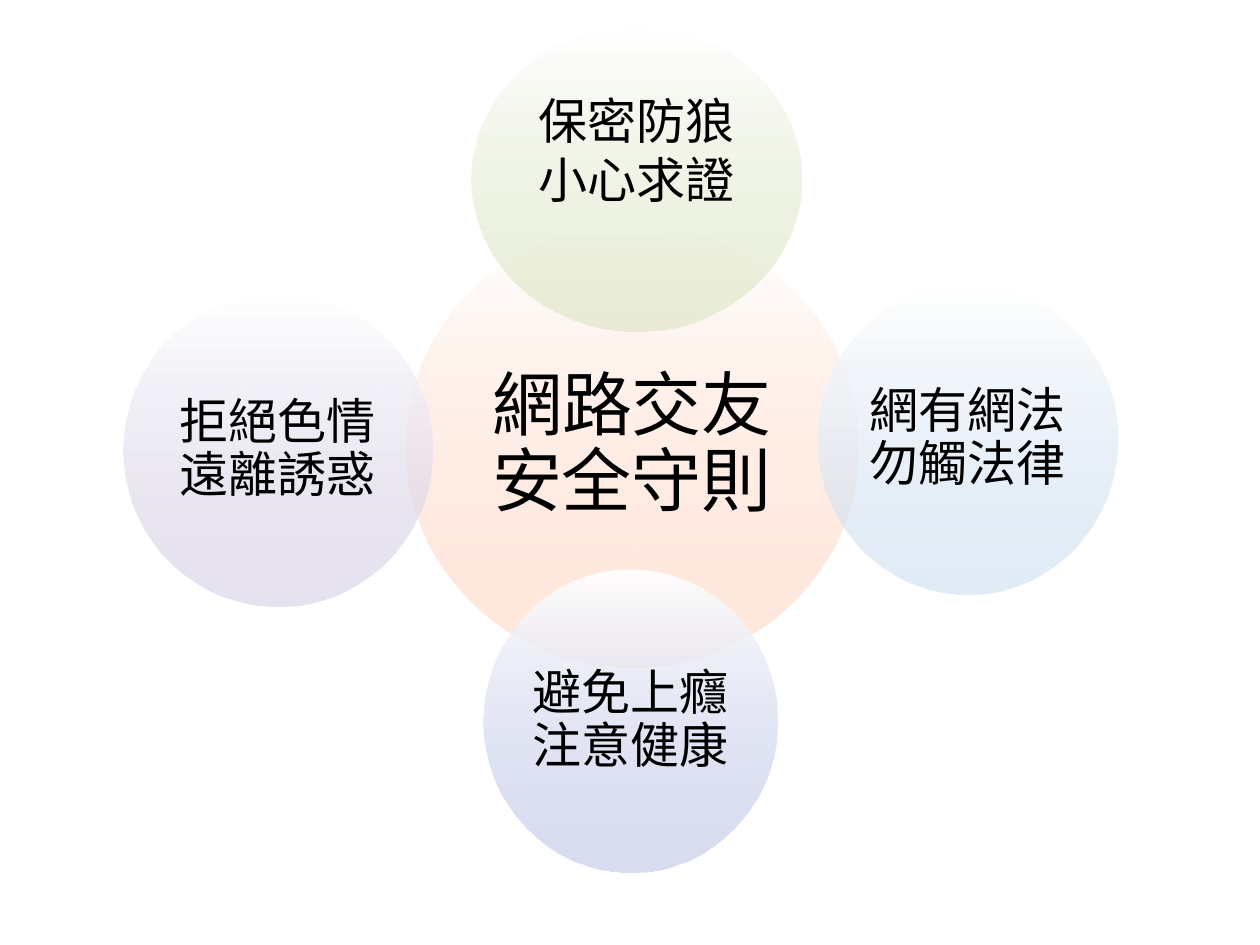
from lxml.etree import SubElement
from pptx import Presentation
from pptx.dml.color import RGBColor
from pptx.enum.shapes import MSO_SHAPE
from pptx.enum.text import MSO_ANCHOR, PP_ALIGN
from pptx.oxml.ns import qn
from pptx.util import Cm, Pt

COLORS = {
    "white": "FFFFFF",
    "text": "000000",
    "orange": "FFD0B9",
    "green": "D5E1B9",
    "blue": "C6DAEF",
    "indigo": "B2BBE2",
    "purple": "CEC6E0",
}


class RulesSlide:
    """Holds the style and the slide that the circles are drawn on."""

    font_name = "Noto Sans CJK SC"
    opacities = (94, 50)  # percent, top and bottom of each circle

    def __init__(self, presentation):
        self.slide = presentation.slides.add_slide(presentation.slide_layouts[6])

    def circle(self, text, color, left, top, width, height,
               size=28, inset=0.1, lift=0, line_spacing=0.9):
        shape = self.slide.shapes.add_shape(
            MSO_SHAPE.OVAL, Cm(left), Cm(top), Cm(width), Cm(height))
        shape.shadow.inherit = False
        shape.line.fill.background()
        self.fade(shape, color)
        self.label(shape, text, size, inset, lift, line_spacing)

    def fade(self, shape, color):
        """Fill from white at the top to a half-transparent colour."""
        fill = shape.fill
        fill.gradient()
        fill.gradient_angle = 270
        for stop, name, position in zip(fill.gradient_stops, ("white", color), (0, 1)):
            stop.color.rgb = RGBColor.from_string(COLORS[name])
            stop.position = position
        stop_colors = shape._element.spPr.iter(qn("a:srgbClr"))
        for stop_color, opacity in zip(stop_colors, self.opacities):
            SubElement(stop_color, qn("a:alpha"), val=str(opacity * 1000))

    def label(self, shape, text, size, inset, lift, line_spacing):
        frame = shape.text_frame
        frame.word_wrap = True
        frame.vertical_anchor = MSO_ANCHOR.MIDDLE
        frame.margin_left = frame.margin_right = frame.margin_top = Cm(inset)
        frame.margin_bottom = Cm(inset + lift)
        paragraph = frame.paragraphs[0]
        paragraph.text = text
        paragraph.alignment = PP_ALIGN.CENTER
        paragraph.line_spacing = line_spacing
        font = paragraph.font
        font.size = Pt(size)
        font.color.rgb = RGBColor.from_string(COLORS["text"])
        font.name = self.font_name
        # East Asian typeface
        SubElement(paragraph._p.pPr.find(qn("a:defRPr")), qn("a:ea"),
                   typeface=self.font_name)


def main():
    presentation = Presentation()
    presentation.slide_width = Cm(25.4)
    presentation.slide_height = Cm(19.05)
    rules = RulesSlide(presentation)

    # Central topic
    rules.circle("網路交友安全守則", "orange", 8.18, 4.52, 9.12, 8.94,
                 size=40, inset=0.15)

    # Four rules around it: top, right, bottom, left
    rules.circle("保密防狼小心求證", "green", 9.5, 0.53, 6.65, 6.15,
                 lift=1.2, line_spacing=1)
    rules.circle("網有網法勿觸法律", "blue", 16.48, 5.72, 6.05, 6.27)
    rules.circle("避免上癮注意健康", "indigo", 9.75, 11.48, 5.93, 6.1)
    rules.circle("拒絕色情遠離誘惑", "purple", 2.49, 5.92, 6.22, 6.3)

    presentation.save("out.pptx")


if __name__ == "__main__":
    main()
